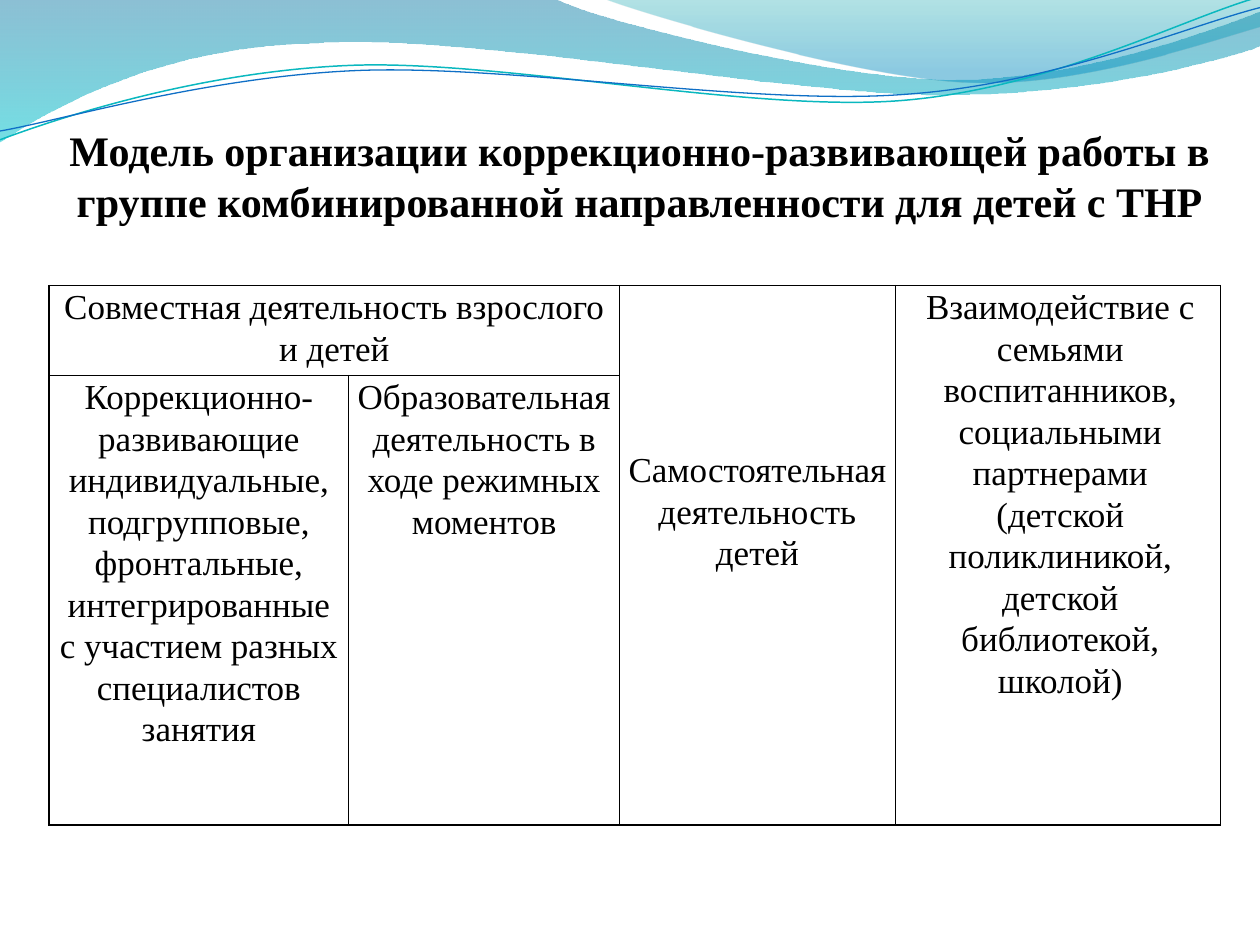
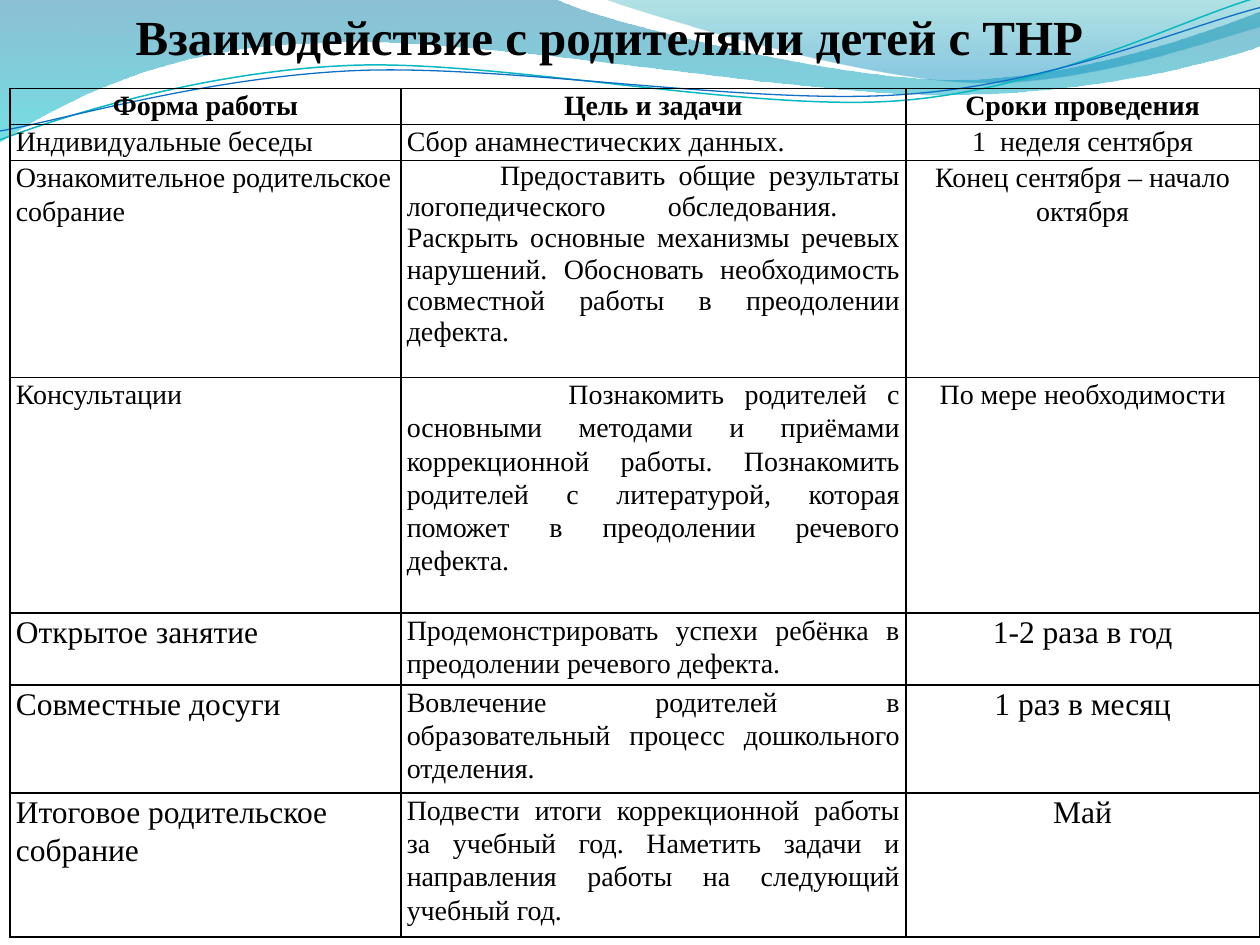
import math

from pptx import Presentation
from pptx import util as u
from pptx.dml import color
from pptx.enum import text
from pptx.oxml import ns, parse_xml
from lxml import etree

BLACK = color.RGBColor(0x00, 0x00, 0x00)
DEEP_BLUE = color.RGBColor(0x00, 0x74, 0xA1)
TURQUOISE = color.RGBColor(0x00, 0xC6, 0xCF)
SEA_GREEN = color.RGBColor(0x00, 0xA1, 0xA9)
SKY_BLUE = color.RGBColor(0x00, 0x8B, 0xBF)
TEAL_LINE = color.RGBColor(0x0A, 0xB8, 0xBF)
BLUE_LINE = color.RGBColor(0x0F, 0x6F, 0xC6)

FONT = "Times New Roman"
LEFT, CENTER, JUSTIFY = text.PP_ALIGN.LEFT, text.PP_ALIGN.CENTER, text.PP_ALIGN.JUSTIFY
WAVE_UNIT = u.Cm(2.54) / 100
LINE_TILT = -2.7

BROAD_BOX = (-1, -1, 1002, 114)
BROAD_WAVE = [
    [(0, 0)],
    [(440, -1)],
    [(476, 17), (664, 63), (758, 63)],
    [(853, 63), (958, 26), (1000, 9)],
    [(1001, 36)],
    [(983, 44), (870, 76), (746, 75)],
    [(622, 75), (382, 28), (257, 34)],
    [(129, 36), (46, 83), (-1, 113)],
    [(0, 0)],
]
RIGHT_BOX = (479, -1, 521, 70)
RIGHT_WAVE = [
    [(479, -1)],
    [(509, 11), (682, 62), (769, 65)],
    [(856, 69), (961, 32), (1000, 21)],
    [(1000, 0)],
    [(479, -1)],
]
TEAL_BOX = (-2, 22, 1002, 71)
TEAL_CURVE = [
    [(0, 111)],
    [(48, 93), (158, 57), (277, 52)],
    [(395, 47), (593, 89), (713, 80)],
    [(833, 71), (938, 15), (998, -2)],
]
BLUE_BOX = (-2, 30, 1003, 58)
BLUE_CURVE = [
    [(0, 104)],
    [(47, 96), (164, 61), (283, 56)],
    [(403, 51), (597, 84), (717, 75)],
    [(836, 67), (941, 21), (1000, 6)],
]

PARENT_WORK = [
    ("Форма работы", "Цель и задачи", "Сроки проведения"),
    ("Индивидуальные беседы", "Сбор анамнестических данных.", "1  неделя сентября"),
    ("Ознакомительное родительское собрание",
     "Предоставить общие результаты логопедического обследования.  Раскрыть основные "
     "механизмы речевых нарушений. Обосновать необходимость совместной работы в "
     "преодолении дефекта.",
     "Конец сентября – начало октября"),
    ("Консультации",
     "Познакомить родителей с основными методами и приёмами коррекционной работы. "
     "Познакомить родителей с литературой, которая поможет в преодолении речевого дефекта.",
     "По мере необходимости"),
    ("Открытое занятие",
     "Продемонстрировать успехи ребёнка в преодолении речевого дефекта.",
     "1-2 раза в год"),
    ("Совместные досуги",
     "Вовлечение родителей в образовательный процесс дошкольного отделения.",
     "1 раз в месяц"),
    ("Итоговое родительское собрание",
     "Подвести итоги коррекционной работы за учебный год. Наметить задачи и направления "
     "работы на следующий учебный год.",
     "Май"),
]
GOAL_INDENTS = {2: u.Cm(1.88), 3: u.Cm(3.26)}


def to_local(point, box, tilt):
    left, top, width, height = box
    x, y = point[0] - left - width / 2, point[1] - top - height / 2
    cos, sin = math.cos(math.radians(-tilt)), math.sin(math.radians(-tilt))
    return (round((x * cos - y * sin + width / 2) * WAVE_UNIT),
            round((x * sin + y * cos + height / 2) * WAVE_UNIT))


def add_wave(slide, origin, box, segments, closed, tilt=0):
    local = [[to_local(point, box, tilt) for point in segment] for segment in segments]
    builder = slide.shapes.build_freeform(*local[0][0])
    builder.add_line_segments([segment[-1] for segment in local[1:]], close=closed)
    wave = builder.convert_to_shape()
    left, top, wave.width, wave.height = (round(side * WAVE_UNIT) for side in box)
    wave.left, wave.top = origin[0] + left, origin[1] + top
    wave.rotation = tilt
    wave.shadow.inherit = False
    outline = wave._element.xpath(".//a:pathLst/a:path")[0]
    outline.set("w", str(wave.width))
    outline.set("h", str(wave.height))
    for stroke, segment in zip(outline, local):
        for corner in list(stroke):
            stroke.remove(corner)
        for x, y in segment:
            etree.SubElement(stroke, ns.qn("a:pt"), x=str(x), y=str(y))
        if len(segment) == 3:
            stroke.tag = ns.qn("a:cubicBezTo")
    return wave


def add_filled_wave(slide, origin, box, segments, shades):
    wave = add_wave(slide, origin, box, segments, True)
    wave.line.fill.background()
    wave.fill.gradient()
    wave.fill.gradient_angle = 270
    for stop, (position, shade, opacity) in zip(wave.fill.gradient_stops, shades):
        stop.position = position
        stop.color.rgb = shade
    for tint, (position, shade, opacity) in zip(wave._element.xpath(".//a:gs/a:srgbClr"), shades):
        etree.SubElement(tint, ns.qn("a:alpha")).set("val", str(opacity * 1000))


def add_wave_line(slide, origin, box, segments, shade, width):
    wave = add_wave(slide, origin, box, segments, False, LINE_TILT)
    wave.fill.background()
    wave.line.color.rgb = shade
    wave.line.width = u.Pt(width)


def add_wave_band(slide, origin):
    add_filled_wave(slide, origin, BROAD_BOX, BROAD_WAVE,
                    [(0, DEEP_BLUE, 45), (1, TURQUOISE, 55)])
    add_filled_wave(slide, origin, RIGHT_BOX, RIGHT_WAVE,
                    [(0, SEA_GREEN, 30), (0.8, SKY_BLUE, 45)])
    add_wave_line(slide, origin, TEAL_BOX, TEAL_CURVE, TEAL_LINE, 0.85)
    add_wave_line(slide, origin, BLUE_BOX, BLUE_CURVE, BLUE_LINE, 0.75)


def style_paragraph(paragraph, size, bold, align):
    paragraph.alignment = align
    for run in paragraph.runs:
        run.font.name = FONT
        run.font.size = u.Pt(size)
        run.font.bold = bold
        run.font.color.rgb = BLACK


def add_title(slide, box, wording, size, wrap):
    frame = slide.shapes.add_textbox(*box).text_frame
    frame.word_wrap = wrap
    frame.auto_size = text.MSO_AUTO_SIZE.SHAPE_TO_FIT_TEXT
    frame.vertical_anchor = text.MSO_ANCHOR.MIDDLE
    frame.text = wording
    style_paragraph(frame.paragraphs[0], size, True, CENTER)


def add_grid(slide, left, top, widths, heights, side_margin):
    grid = slide.shapes.add_table(len(heights), len(widths), left, top,
                                  sum(widths), sum(heights)).table
    grid.first_row = grid.horz_banding = False
    for column, width in zip(grid.columns, widths):
        column.width = width
    for row, height in zip(grid.rows, heights):
        row.height = height
    for cell in grid.iter_cells():
        cell.margin_left = cell.margin_right = side_margin
        cell.margin_top = cell.margin_bottom = 0
        for side in ("lnL", "lnR", "lnT", "lnB"):
            cell._tc.get_or_add_tcPr().append(parse_xml(
                f'<a:{side} {ns.nsdecls("a")} w="12700"><a:solidFill>'
                f'<a:srgbClr val="{BLACK}"/></a:solidFill></a:{side}>'))
        cell.fill.background()
    return grid


def write_cell(cell, wording, size, align, bold=False, spacing=1.07):
    cell.text_frame.text = wording
    paragraph = cell.text_frame.paragraphs[0]
    paragraph.line_spacing = spacing
    style_paragraph(paragraph, size, bold, align)
    return paragraph


def add_model_table(slide, left, top):
    widths = [u.Cm(w) for w in (6.04, 5.46, 5.56, 6.55)]
    heights = [u.Cm(h) for h in (1.81, 9.06)]
    grid = add_grid(slide, left, top, widths, heights, u.Cm(0.17))
    joint, independent, family = (grid.cell(0, column) for column in (0, 2, 3))
    joint.merge(grid.cell(0, 1))
    independent.merge(grid.cell(1, 2))
    family.merge(grid.cell(1, 3))
    independent.margin_top = u.Cm(3.29)
    write_cell(joint, "Совместная деятельность взрослого и детей", 20, CENTER)
    write_cell(independent, "Самостоятельная деятельность детей", 20, CENTER)
    partners = write_cell(
        family, "Взаимодействие с семьями воспитанников, социальными партнерами "
        "(детской поликлиникой, детской библиотекой, школой)", 20, CENTER)
    partners._p.get_or_add_pPr().set("marL", str(u.Cm(0.1)))
    write_cell(grid.cell(1, 0), "Коррекционно-развивающие индивидуальные, подгрупповые, "
               "фронтальные, интегрированные с участием разных специалистов занятия", 20, CENTER)
    write_cell(grid.cell(1, 1), "Образовательная деятельность в ходе режимных моментов",
               20, CENTER)


def add_parents_table(slide, left, top):
    widths = [u.Cm(w) for w in (7.88, 10.18, 7.13)]
    heights = [u.Cm(h) for h in (0.73, 0.73, 4.37, 4.75, 1.45, 2.18, 2.88)]
    grid = add_grid(slide, left, top, widths, heights, u.Cm(0.12))
    for row, (form, goal, dates) in enumerate(PARENT_WORK):
        header = row == 0
        outer_size = 18 if row >= 4 else 16
        goal_align = CENTER if header else LEFT if row == 1 else JUSTIFY
        write_cell(grid.cell(row, 0), form, outer_size, CENTER if header else LEFT, header)
        aim = write_cell(grid.cell(row, 1), goal, 16, goal_align, header,
                         1.0 if row == 2 else 1.07)
        write_cell(grid.cell(row, 2), dates, outer_size, CENTER, header)
        if row in GOAL_INDENTS:
            aim._p.get_or_add_pPr().set("indent", str(GOAL_INDENTS[row]))


def add_wave_slide(deck):
    slide = deck.slides.add_slide(deck.slide_layouts[6])
    add_wave_band(slide, (0, 0))
    return slide


def build_model_slide(deck):
    slide = add_wave_slide(deck)
    add_title(slide, (u.Cm(0.98), u.Cm(2.38), u.Cm(23.83), u.Cm(2.31)),
              "Модель организации коррекционно-развивающей работы в группе "
              "комбинированной направленности для детей с ТНР", 24, True)
    add_model_table(slide, u.Cm(0.99), u.Cm(5.76))


def build_parents_slide(deck):
    slide = add_wave_slide(deck)
    add_title(slide, (u.Cm(2.38), 0, u.Cm(19.81), u.Cm(1.45)),
              "Взаимодействие с родителями детей с ТНР", 28, False)
    add_parents_table(slide, u.Cm(0.2), u.Cm(1.78))


def main():
    deck = Presentation()
    deck.slide_width, deck.slide_height = u.Cm(25.4), u.Cm(19.05)
    build_model_slide(deck)
    build_parents_slide(deck)
    deck.save("out.pptx")


if __name__ == "__main__":
    main()
